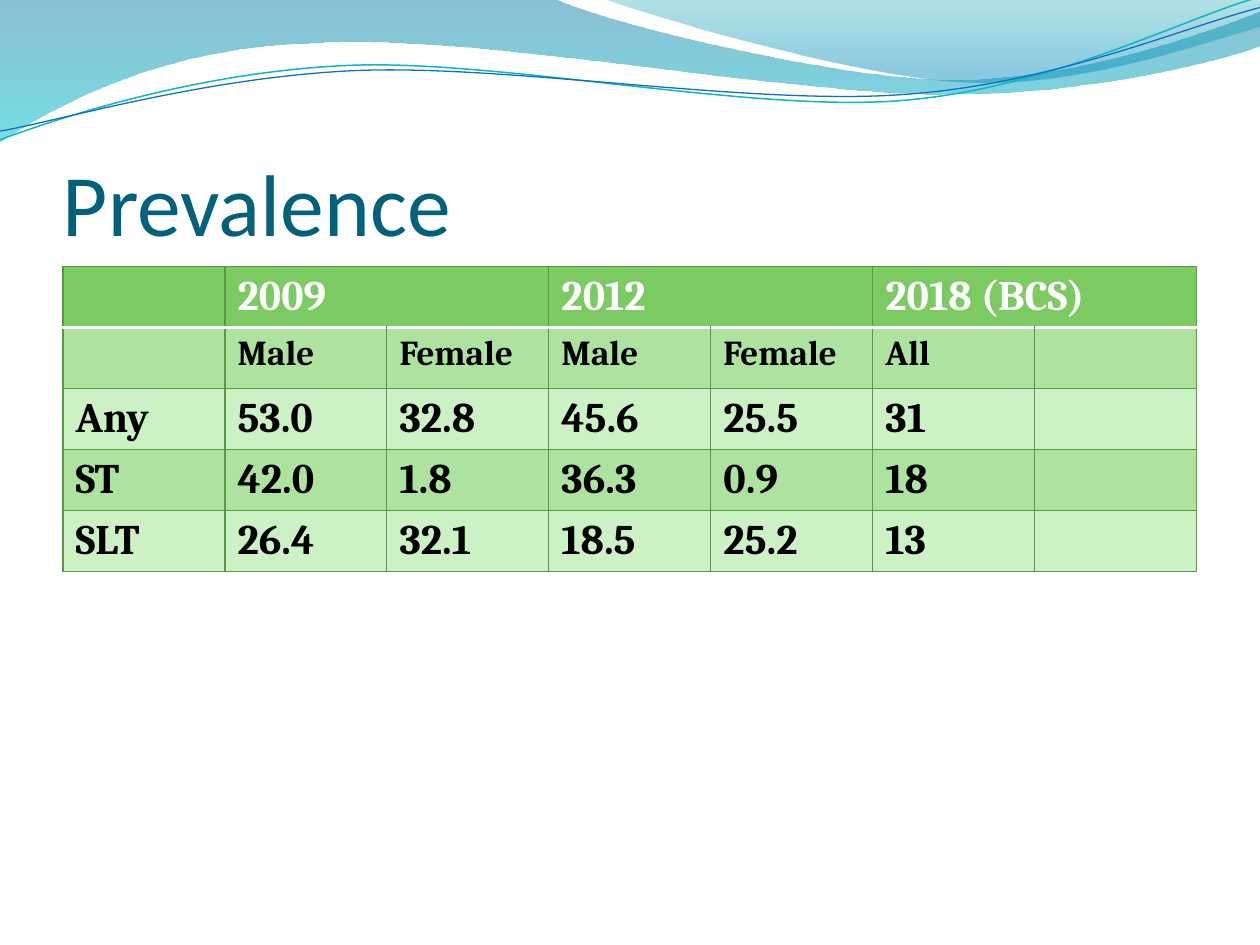
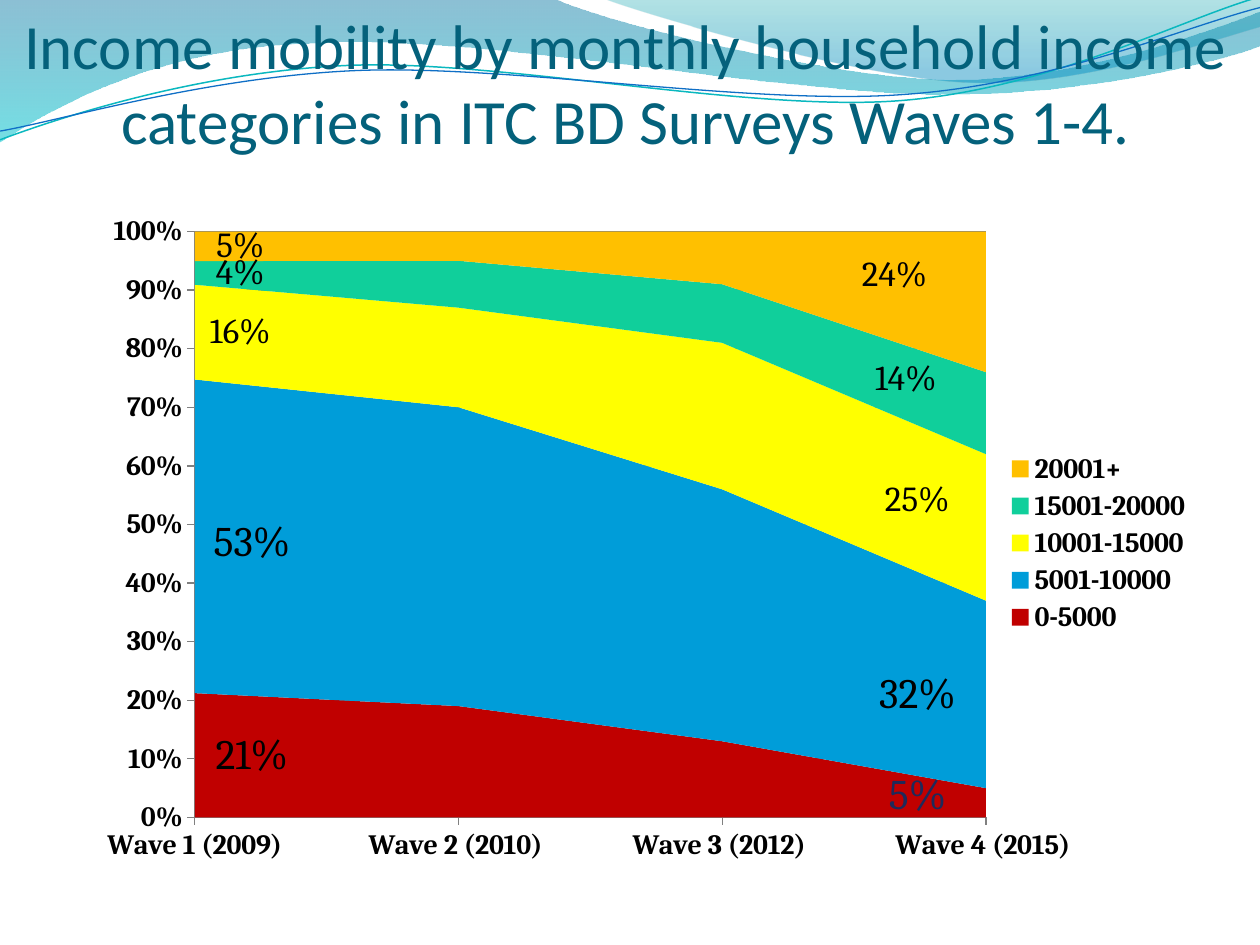
"""Build two slides on prevalence and income mobility."""
from lxml.etree import SubElement
from pptx import Presentation
from pptx.chart.data import CategoryChartData
from pptx.dml.color import RGBColor
from pptx.enum.chart import XL_CHART_TYPE, XL_LEGEND_POSITION, XL_TICK_MARK
from pptx.enum.text import MSO_ANCHOR, PP_ALIGN
from pptx.oxml import parse_xml
from pptx.oxml.ns import nsdecls, qn
from pptx.util import Pt

TITLE = RGBColor(0x04, 0x61, 0x7B)
BLACK = RGBColor(0, 0, 0)
WHITE = RGBColor(0xFF, 0xFF, 0xFF)
NAVY = RGBColor(0x1F, 0x2A, 0x5A)
GRAY = RGBColor(0x80, 0x80, 0x80)
TEAL = RGBColor(0x0A, 0xB8, 0xBF)
BLUE = RGBColor(0x0F, 0x6F, 0xC6)
DEEP = RGBColor(0x00, 0x74, 0xA1)
CYAN = RGBColor(0x00, 0xC6, 0xCF)
SEA = RGBColor(0x00, 0xA1, 0xA9)
SKY = RGBColor(0x00, 0x8B, 0xBF)
HEAD = RGBColor(0x7C, 0xCA, 0x62)
DARK = RGBColor(0xAE, 0xE2, 0x9F)
LIGHT = RGBColor(0xCC, 0xF1, 0xC4)
EDGE = RGBColor(0x5B, 0x97, 0x47)
RED = RGBColor(0xC0, 0x00, 0x00)
AZURE = RGBColor(0x00, 0x9D, 0xD9)
YELLOW = RGBColor(0xFF, 0xFF, 0x00)
GREEN = RGBColor(0x10, 0xCF, 0x9B)
AMBER = RGBColor(0xFF, 0xC0, 0x00)
SANS, SERIF = "Calibri", "Cambria"

BANDS = [
    ([(0, 0), (316.8, -0.7),
      (342.7, 12.2, 478, 45.4, 545.8, 45.4),
      (614.2, 45.4, 689.8, 18.7, 720, 6.5), (720.7, 25.9),
      (707.8, 31.7, 626.4, 54.7, 537.1, 54),
      (447.8, 54, 275, 20.2, 185, 24.5),
      (92.9, 25.9, 33.1, 59.8, -0.7, 81.4)],
     [(0, DEEP, 45), (1, CYAN, 55)]),
    ([(344.9, -0.7),
      (366.5, 7.9, 491, 44.6, 553.7, 46.8),
      (616.3, 49.7, 691.9, 23, 720, 15.1), (720, 0)],
     [(0, SEA, 30), (0.8, SKY, 45)]),
]
WAVES = [
    ([(0, 79.9),
      (34.6, 67, 113.8, 41, 199.4, 37.4),
      (284.4, 33.8, 427, 64.1, 513.4, 57.6),
      (599.8, 51.1, 675.4, 10.8, 718.6, -1.4)], TEAL, 0.85),
    ([(0, 74.9),
      (33.8, 69.1, 118.1, 43.9, 203.8, 40.3),
      (290.2, 36.7, 429.8, 60.5, 516.2, 54),
      (601.9, 48.2, 677.5, 15.1, 720, 4.3)], BLUE, 0.75),
]

YEARS = ["2009", "2012", "2018 (BCS)"]
ROWS = [
    ["", "Male", "Female", "Male", "Female", "All", ""],
    ["Any", "53.0", "32.8", "45.6", "25.5", "31", ""],
    ["ST", "42.0", "1.8", "36.3", "0.9", "18", ""],
    ["SLT", "26.4", "32.1", "18.5", "25.2", "13", ""],
]

SURVEYS = ["Wave 1 (2009)", "Wave 2 (2010) ", "Wave 3 (2012) ",
           "Wave 4 (2015) "]
INCOMES = [
    ("0-5000", (0.21, 0.19, 0.13, 0.05), RED),
    ("5001-10000 ", (0.53, 0.51, 0.43, 0.32), AZURE),
    ("10001-15000 ", (0.16, 0.17, 0.25, 0.25), YELLOW),
    ("15001-20000 ", (0.04, 0.08, 0.1, 0.14), GREEN),
    ("20001+ ", (0.05, 0.05, 0.09, 0.24), AMBER),
]
LABELS = [
    (24, NAVY, (0.05, 0), (-0.06, -0.01)),
    (24, BLACK, (0.05, 0.01), (-0.06, 0)),
    (20, BLACK, (0.04, 0), (-0.06, -0.04)),
    (20, BLACK, (0.04, 0), (-0.07, -0.05)),
    (20, BLACK, (0.04, 0), (-0.08, -0.04)),
]


def write(para, text, size, color, face=SERIF, bold=False):
    run = para.add_run()
    run.text = text
    font = run.font
    font.size, font.name, font.bold = Pt(size), face, bold
    font.color.rgb = color


def outline(slide, path, close):
    dots = [(Pt(part[i]), Pt(part[i + 1]))
            for part in path for i in range(0, len(part), 2)]
    pen = slide.shapes.build_freeform(*dots[0], scale=1.0)
    pen.add_line_segments(dots[1:], close=close)
    shape = pen.convert_to_shape()
    shape.shadow.inherit = False
    legs = iter(shape._element.findall(".//" + qn("a:lnTo")))
    for part in path[1:]:
        group = [next(legs) for _ in range(len(part) // 2)]
        if len(group) == 3:
            curve = parse_xml(f'<a:cubicBezTo {nsdecls("a")}/>')
            group[0].addprevious(curve)
            for leg in group:
                curve.append(leg[0])
                leg.getparent().remove(leg)
    return shape


def add_bands(deck, slide):
    shapes = []
    for path, stops in BANDS:
        band = outline(slide, path, True)
        band.line.fill.background()
        band.fill.gradient()
        band.fill.gradient_angle = 270
        for stop, (place, color, alpha) in zip(band.fill.gradient_stops, stops):
            stop.position, stop.color.rgb = place, color
            tint = stop._gs.find(qn("a:srgbClr"))
            SubElement(tint, qn("a:alpha")).set("val", str(alpha * 1000))
        shapes.append(band)
    for path, color, width in WAVES:
        wave = outline(slide, path, False)
        wave.fill.background()
        wave.line.color.rgb, wave.line.width = color, Pt(width)
        shapes.append(wave)
    for i, shape in enumerate(shapes):
        shape._element.nvSpPr.cNvPr.set("id", str(101 + i))
        deck.slide_master.shapes._spTree.append(shape._element)


def add_title(slide, title, box, size, align):
    frame = slide.shapes.add_textbox(*map(Pt, box)).text_frame
    frame.word_wrap = True
    frame.vertical_anchor = MSO_ANCHOR.BOTTOM
    frame.margin_left = frame.margin_right = frame.margin_bottom = 0
    frame.margin_top = Pt(3.6)
    para = frame.paragraphs[0]
    para.alignment = align
    write(para, title, size, TITLE, SANS)


def paint(cell, fill, top, low):
    props = cell._tc.get_or_add_tcPr()
    thin = (EDGE, 0.75)
    for side, (color, width) in zip("LRTB", (thin, thin, top, low)):
        props.append(parse_xml(
            f'<a:ln{side} {nsdecls("a")} w="{Pt(width)}"><a:solidFill>'
            f'<a:srgbClr val="{color}"/></a:solidFill></a:ln{side}>'))
    cell.fill.solid()
    cell.fill.fore_color.rgb = fill
    cell.margin_bottom = Pt(2)


def add_rates(slide):
    head = [""]
    for year in YEARS:
        head += [year, ""]
    lines = [head] + ROWS
    wide, high = 92.57, 34.85
    table = slide.shapes.add_table(
        len(lines), len(head), Pt(36), Pt(152.4),
        Pt(wide * len(head)), Pt(high * len(lines))).table
    for col in table.columns:
        col.width = Pt(wide)
    thin, rule = (EDGE, 0.75), (WHITE, 2)
    for r, line in enumerate(lines):
        table.rows[r].height = Pt(high)
        fill = HEAD if r == 0 else DARK if r % 2 else LIGHT
        for c, text in enumerate(line):
            cell = table.cell(r, c)
            paint(cell, fill, rule if r == 1 else thin, rule if r == 0 else thin)
            if text:
                write(cell.text_frame.paragraphs[0], text, 20 if r == 1 else 24,
                      BLACK if r else WHITE, bold=True)
    for c in range(1, len(head), 2):
        table.cell(0, c).merge(table.cell(0, c + 1))


def layout(spots, inner=False):
    body = ""
    if inner:
        body = ('<c:layoutTarget val="inner"/>'
                '<c:xMode val="edge"/><c:yMode val="edge"/>')
    body += "".join(f'<c:{key} val="{val}"/>' for key, val in spots.items())
    return parse_xml(f'<c:layout {nsdecls("c")}><c:manualLayout>{body}'
                     '</c:manualLayout></c:layout>')


def set_font(font, size, bold):
    font.size, font.bold, font.name = Pt(size), bold, SERIF
    font.color.rgb = BLACK


def mark(series, spot, text, size, color, shift):
    label = series.points[spot].data_label
    write(label.text_frame.paragraphs[0], text, size, color)
    node = series._element.xpath(f'c:dLbls/c:dLbl[c:idx/@val="{spot}"]')[0]
    for old in node.findall(qn("c:layout")):
        node.remove(old)
    node.insert(1, layout(dict(zip("xy", shift))))
    return node


def add_labels(series, vals, size, color, first, last):
    labels = series.data_labels
    labels.show_value = True
    labels.number_format, labels.number_format_is_linked = "0%", False
    mark(series, 0, f"{vals[0]:.0%}", size, BLACK, first)
    end = mark(series, 3, f"{vals[3]:.0%}", size, color, last)
    for spot in (1, 2):
        end.addprevious(parse_xml(
            f'<c:dLbl {nsdecls("c")}><c:idx val="{spot}"/>'
            '<c:delete val="1"/></c:dLbl>'))
    for node in series._element.xpath(".//c:showLeaderLines"):
        node.set("val", "0")


def add_areas(slide):
    data = CategoryChartData(number_format="0%")
    data.categories = SURVEYS
    for name, vals, _ in INCOMES:
        data.add_series(name, vals)
    chart = slide.shapes.add_chart(
        XL_CHART_TYPE.AREA_STACKED_100, Pt(39.6), Pt(118.1), Pt(652.3),
        Pt(384.5), data).chart
    set_font(chart.font, 10, False)
    chart.has_title = False
    chart.has_legend = True
    chart.legend.position = XL_LEGEND_POSITION.RIGHT
    chart.legend.include_in_layout = False
    set_font(chart.legend.font, 16, True)
    for axis in (chart.category_axis, chart.value_axis):
        set_font(axis.tick_labels.font, 16, True)
        axis.major_tick_mark = XL_TICK_MARK.OUTSIDE
        axis.minor_tick_mark = XL_TICK_MARK.NONE
        axis.format.line.color.rgb = GRAY
    chart.category_axis.has_major_gridlines = False
    scale = chart.value_axis
    scale.has_major_gridlines = True
    scale.major_gridlines.format.line.color.rgb = GRAY
    scale.minimum_scale, scale.maximum_scale, scale.major_unit = 0, 1, 0.1
    scale.tick_labels.number_format = "0%"
    scale.tick_labels.number_format_is_linked = False
    for node in chart._chartSpace.xpath(".//c:crossBetween"):
        node.set("val", "midCat")
    plot = chart._chartSpace.xpath(".//c:plotArea")[0]
    for old in plot.findall(qn("c:layout")):
        plot.remove(old)
    plot.insert(0, layout({"x": 0.11, "y": 0.037, "w": 0.693, "h": 0.871}, True))
    for series, (_, vals, fill), style in zip(
            chart.plots[0].series, INCOMES, LABELS):
        series.format.fill.solid()
        series.format.fill.fore_color.rgb = fill
        add_labels(series, vals, *style)


def main():
    deck = Presentation()
    deck.slide_width, deck.slide_height = Pt(720), Pt(540)
    blank = deck.slide_layouts[6]
    rates, areas = [deck.slides.add_slide(blank) for _ in range(2)]
    add_bands(deck, rates)
    add_title(rates, "Prevalence", (36, 55.4, 648, 90), 50, PP_ALIGN.LEFT)
    add_rates(rates)
    add_title(areas, "Income mobility by monthly household income categories "
              "in ITC BD Surveys Waves 1-4.", (11.5, 0, 692, 90), 36,
              PP_ALIGN.CENTER)
    add_areas(areas)
    deck.save("out.pptx")


if __name__ == "__main__":
    main()
